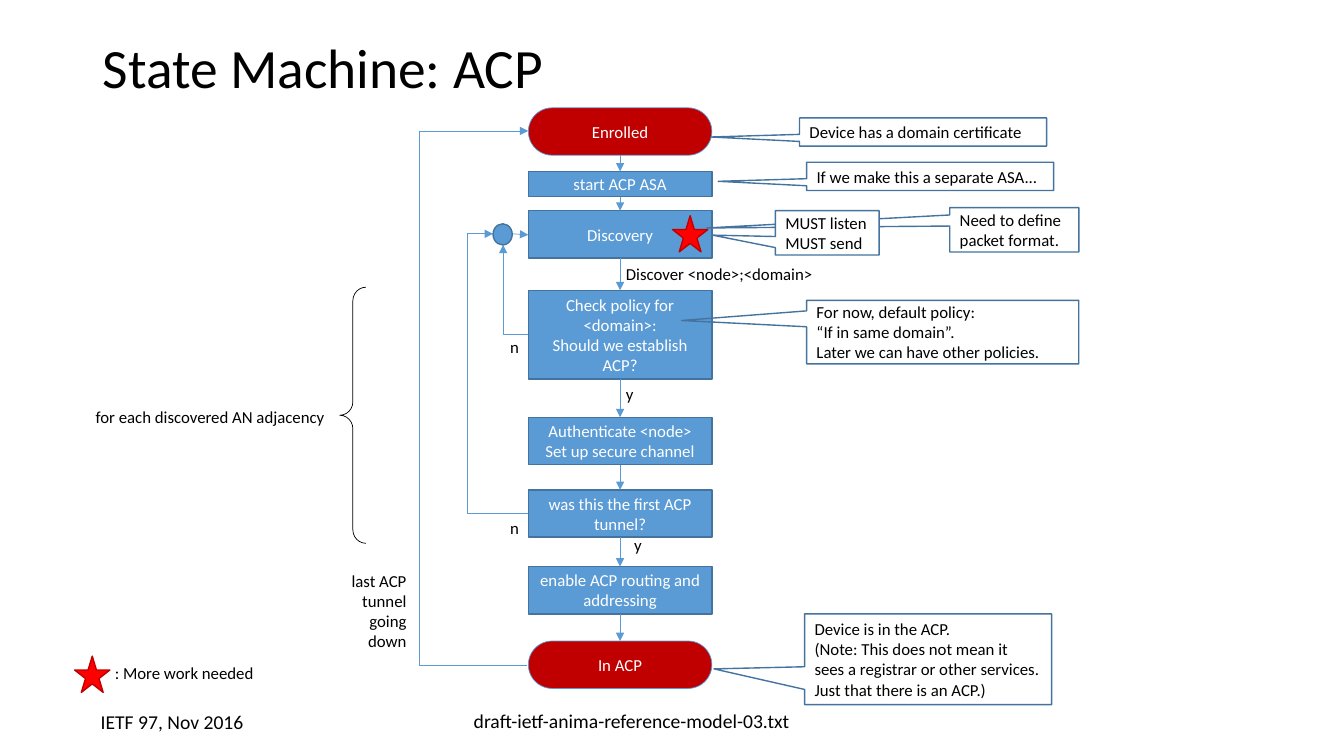
from lxml.etree import SubElement as Sub
from pptx import Presentation
from pptx.dml.color import RGBColor as Rgb
from pptx.enum.shapes import MSO_CONNECTOR as Link, MSO_SHAPE as Form
from pptx.enum.text import MSO_ANCHOR as Anchor, PP_ALIGN as Align
from pptx.oxml.ns import qn
from pptx.util import Inches, Pt

HUES = {"blue": "5B9BD5", "edge": "43739E", "red": "C00000",
        "star": "FF0000", "black": "000000", "white": "FFFFFF"}


def hue(name):
    return Rgb.from_string(HUES[name])


def write(frame, text, size=12, color="black", align=Align.LEFT,
          anchor=Anchor.TOP, wrap=True, space=None):
    """Put text in a frame, one paragraph per line."""
    frame.word_wrap = wrap
    frame.vertical_anchor = anchor
    for i, line in enumerate(text.split("\n")):
        para = frame.add_paragraph() if i else frame.paragraphs[0]
        para.alignment = align
        if space:
            para.line_spacing = space
        run = para.add_run()
        run.text = line
        run.font.name = "Calibri"
        run.font.size = Pt(size)
        run.font.color.rgb = hue(color)


class Chart:
    """State chart style and the slide it is drawn on."""

    def __init__(self, slide, thin=0.5, wide=1):
        self.slide, self.thin, self.wide = slide, Pt(thin), Pt(wide)

    def label(self, text, x, y, w, h=0.3, wrap=False, **style):
        box = self.slide.shapes.add_textbox(*map(Inches, (x, y, w, h)))
        write(box.text_frame, text, wrap=wrap, **style)

    def shape(self, form, x, y, w, h, fill=None, edge="edge", thin=False,
              adj=(), text="", **style):
        item = self.slide.shapes.add_shape(form, *map(Inches, (x, y, w, h)))
        item.shadow.inherit = False
        for i, value in enumerate(adj):
            item.adjustments[i] = value
        if fill:
            item.fill.solid()
            item.fill.fore_color.rgb = hue(fill)
        else:
            item.fill.background()
        item.line.color.rgb = hue(edge)
        item.line.width = self.thin if thin else self.wide
        if text:
            write(item.text_frame, text, anchor=Anchor.MIDDLE, **style)

    def step(self, text, y, h, end=False):
        form = Form.ROUNDED_RECTANGLE if end else Form.RECTANGLE
        self.shape(form, 5.24, y, 1.82, h, fill="red" if end else "blue",
                   edge="blue" if end else "edge", thin=end,
                   adj=[0.5] if end else [], text=text, color="white",
                   align=Align.CENTER)

    def note(self, text, x, y, w, h, tip, fill=None):
        self.shape(Form.RECTANGULAR_CALLOUT, x, y, w, h, fill=fill,
                   adj=tip, text=text)

    def star(self, x, y):
        self.shape(Form.STAR_5_POINT, x, y, 0.35, 0.36, "star", "red")

    def arrow(self, x1, y1, x2, y2, bend=None):
        """Straight arrow, or an elbow whose upright stands at x = bend."""
        kind = Link.STRAIGHT if bend is None else Link.ELBOW
        wire = self.slide.shapes.add_connector(
            kind, *map(Inches, (x1, y1, x2, y2)))
        wire.line.color.rgb = hue("blue")
        wire.line.width = self.thin
        props = wire._element.spPr
        Sub(props.find(qn("a:ln")), qn("a:tailEnd"), type="triangle")
        Sub(props, qn("a:effectLst"))
        if bend is None:
            return
        geom = props.find(qn("a:prstGeom"))
        if bend == x2:
            geom.set("prst", "bentConnector2")
        else:
            part = round((bend - x1) / (x2 - x1) * 100000)
            Sub(geom.find(qn("a:avLst")), qn("a:gd"), name="adj1",
                fmla=f"val {part}")


def main():
    deck = Presentation()
    deck.slide_width, deck.slide_height = Inches(13.33), Inches(7.5)
    chart = Chart(deck.slides.add_slide(deck.slide_layouts[6]))

    # Title and footer
    chart.label("State Machine: ACP", 0.92, 0.4, 11.5, 0.59, wrap=True,
                size=39.6, anchor=Anchor.MIDDLE, space=0.9)
    chart.label("IETF 97, Nov 2016", 0.9, 6.99, 1.63, 0.34, size=14)
    chart.label("draft-ietf-anima-reference-model-03.txt",
                4.6, 6.98, 3.38, 0.34, size=14)

    # States from top to bottom, with an arrow between neighbours
    steps = [
        ("Enrolled", 1.07, 0.47, True),
        ("start ACP ASA", 1.7, 0.25, False),
        ("Discovery", 2.09, 0.47, False),
        ("Check policy for <domain>:\nShould we establish ACP?",
         2.88, 0.88, False),
        ("Authenticate <node>\nSet up secure channel", 4.14, 0.47, False),
        ("was this the first ACP tunnel?", 4.86, 0.47, False),
        ("enable ACP routing and addressing", 5.62, 0.47, False),
        ("In ACP", 6.36, 0.47, True),
    ]
    for step in steps:
        chart.step(*step)
    for (_, top, high, _), (_, below, _, _) in zip(steps, steps[1:]):
        chart.arrow(6.15, top + high, 6.15, below)

    # Loops back to earlier states
    chart.arrow(5.24, 5.09, 4.89, 2.32, bend=4.64)
    chart.arrow(5.24, 3.32, 4.99, 2.43, bend=4.99)
    chart.arrow(5.23, 6.6, 5.24, 1.3, bend=4.14)
    chart.shape(Form.OVAL, 4.89, 2.22, 0.19, 0.21, "blue")
    chart.arrow(5.09, 2.32, 5.24, 2.33)

    # Arrow labels
    for text, x, y, w in [
        ("Discover <node>;<domain>", 6.11, 2.57, 2.07),
        ("n", 4.96, 3.29, 0.29),
        ("y", 6.11, 3.76, 0.28),
        ("n", 4.96, 5.09, 0.29),
        ("y", 6.19, 5.26, 0.28),
    ]:
        chart.label(text, x, y, w)
    chart.label("last ACP tunnel going down", 3.19, 5.61, 0.94, 0.91,
                wrap=True, align=Align.RIGHT)

    # Stars and their key
    chart.star(6.67, 2.14)
    chart.star(0.74, 6.51)
    chart.label(": More work needed", 1.04, 6.53, 1.6)

    # Callouts
    chart.note("Device has a domain certificate",
               7.93, 1.17, 2.45, 0.28, (-0.858, 0.176))
    chart.note("If we make this a separate ASA...",
               8, 1.61, 2.45, 0.28, (-0.858, 0.176))
    chart.note("Need to define packet format.",
               9.42, 2.06, 1.28, 0.44, (-2.383, -0.041))
    chart.note("MUST listen\nMUST send",
               7.69, 2.09, 1.03, 0.44, (-1.105, 0.052), fill="white")
    chart.note("For now, default policy:\n“If in same domain”.\n"
               "Later we can have other policies.",
               8, 2.98, 2.7, 0.63, (-0.959, -0.182))
    chart.note("Device is in the ACP.\n(Note: This does not mean it sees a "
               "registrar or other services. Just that there is an ACP.)",
               7.98, 6.09, 2.45, 0.9, (-0.867, 0.107))

    # Brace over the repeated part
    chart.label("for each discovered AN adjacency", 0.85, 3.99, 2.5)
    chart.shape(Form.LEFT_BRACE, 3.37, 2.85, 0.26, 2.54, edge="black",
                thin=True, adj=(0.516, 0.5))

    deck.save("out.pptx")


if __name__ == "__main__":
    main()
